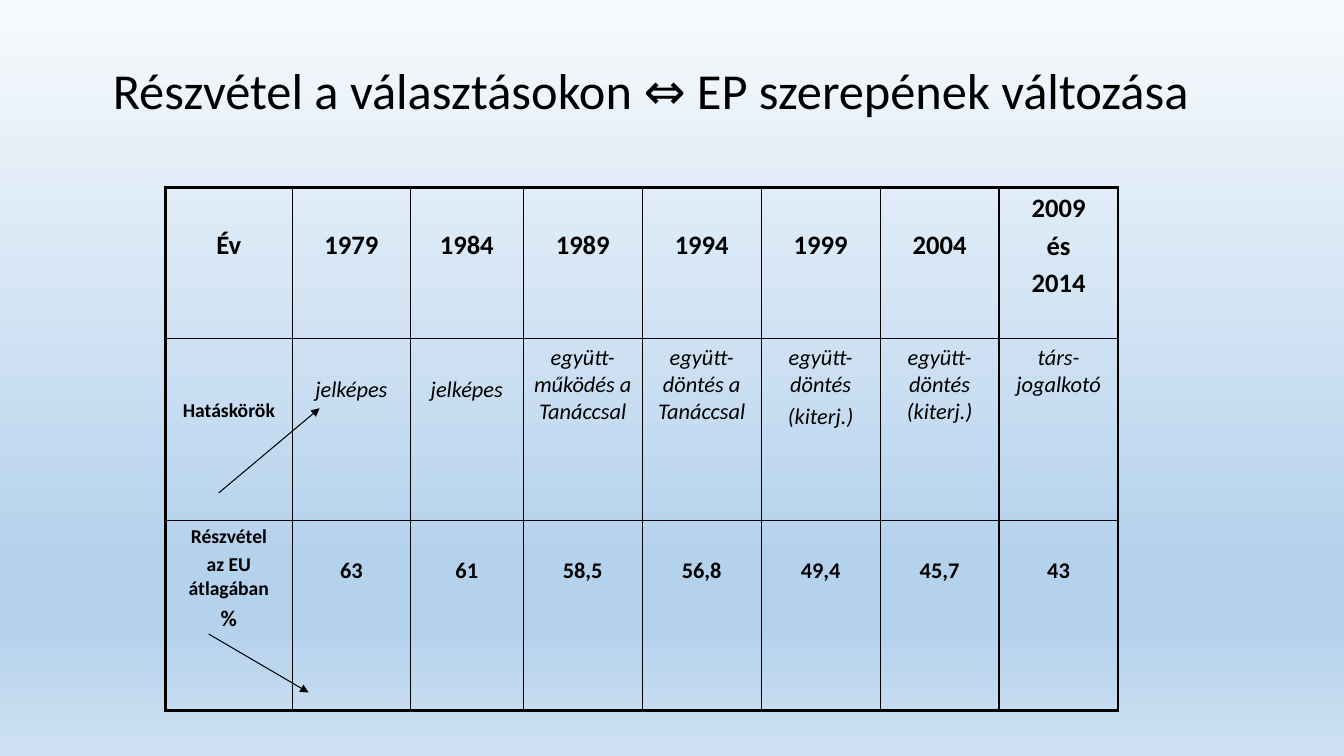
from lxml import etree
from pptx import Presentation
from pptx import util as u
from pptx.dml.color import RGBColor
from pptx.enum import shapes, text
from pptx.oxml.ns import qn

HUES = {"ink": "000000", "top": "F7FAFD", "mid": "B5D2EC", "base": "CEE1F2"}
FONT = "Calibri"
COLS = [1.26, 1.17, 1.12] + [1.18] * 5
ROWS = [1.5, 1.8, 1.89]
THIN, THICK = 1, 2.25


class Page:
    def __init__(self, deck):
        self.slide = deck.slides.add_slide(deck.slide_layouts[6])

    def backdrop(self, stops):
        fill = self.slide.background.fill
        fill.gradient()
        fill.gradient_angle = 270
        ramp = self.slide.element.find(".//" + qn("a:gsLst"))
        for old in list(ramp):
            ramp.remove(old)
        for spot, hue in stops:
            stop = etree.SubElement(ramp, qn("a:gs"), pos=str(spot * 1000))
            etree.SubElement(stop, qn("a:srgbClr"), val=HUES[hue])

    def style(self, para, size, bold=False, italic=False):
        font = para.font
        font.name, font.size = FONT, u.Pt(size)
        font.bold, font.italic = bold, italic
        font.color.rgb = RGBColor.from_string(HUES["ink"])

    def title(self, words, left, top, width, height, size):
        box = self.slide.shapes.add_textbox(*map(u.Inches, (left, top, width, height)))
        frame = box.text_frame
        frame.word_wrap = True
        frame.vertical_anchor = text.MSO_ANCHOR.MIDDLE
        para = frame.paragraphs[0]
        para.text = words
        para.line_spacing = 0.9
        self.style(para, size)

    def table(self, left, top, cols, rows):
        frame = self.slide.shapes.add_table(
            len(rows), len(cols), u.Inches(left), u.Inches(top),
            u.Inches(sum(cols)), u.Inches(sum(rows)))
        grid = frame.table
        grid.first_row = grid.horz_banding = False
        for col, width in zip(grid.columns, cols):
            col.width = u.Inches(width)
        for row, height in zip(grid.rows, rows):
            row.height = u.Inches(height)
        return grid

    def cell(self, cell, lines, inset, edges, bold, italic):
        cell.margin_top = u.Inches(inset)
        frame = cell.text_frame
        for i, (words, size) in enumerate(lines):
            para = frame.add_paragraph() if i else frame.paragraphs[0]
            para.text = words
            para.alignment = text.PP_ALIGN.CENTER
            if i:
                para.space_before = u.Pt(size * 0.2)
            self.style(para, size, bold, italic)
        props = cell._tc.get_or_add_tcPr()
        for side, width in zip("LRTB", edges):
            line = etree.SubElement(props, qn("a:ln" + side), w=str(u.Pt(width)))
            paint = etree.SubElement(line, qn("a:solidFill"))
            etree.SubElement(paint, qn("a:srgbClr"), val=HUES["ink"])
        cell.fill.background()

    def arrow(self, *ends):
        link = self.slide.shapes.add_connector(
            shapes.MSO_CONNECTOR.STRAIGHT, *map(u.Inches, ends))
        link.line.width = u.Pt(0.75)
        link.line.color.rgb = RGBColor.from_string(HUES["ink"])
        etree.SubElement(link.line._get_or_add_ln(), qn("a:tailEnd"), type="triangle")
        etree.SubElement(link._element.spPr, qn("a:effectLst"))


YEARS = ["Év", "1979", "1984", "1989", "1994", "1999", "2004", "2009\nés\n2014"]
POWERS = ["Hatáskörök", "jelképes", "jelképes", "együtt-működés a Tanáccsal",
          "együtt-döntés a Tanáccsal", "együtt-döntés\n(kiterj.)",
          "együtt-döntés (kiterj.)", "társ-jogalkotó"]
TURNOUT = ["Részvétel\naz EU átlagában\n%", "63", "61", "58,5", "56,8",
           "49,4", "45,7", "43"]
SIZES = [19, 16, 16]
INSETS = [[0.42] * 7 + [0.05],
          [0.6, 0.37, 0.37] + [0.05] * 5,
          [0.05] + [0.37] * 7]


def main():
    deck = Presentation()
    deck.slide_width, deck.slide_height = u.Inches(13.33), u.Inches(7.5)
    page = Page(deck)
    page.backdrop([(0, "top"), (74, "mid"), (83, "mid"), (100, "base")])
    page.title("Részvétel a választásokon ⇔ EP szerepének változása",
               1.02, 0.3, 11.65, 1.25, 36)
    grid = page.table(1.64, 1.86, COLS, ROWS)
    for r, row in enumerate([YEARS, POWERS, TURNOUT]):
        for c, words in enumerate(row):
            label = r > 0 and c == 0
            lines = [(line, 14 if label and line != "%" else SIZES[r])
                     for line in words.split("\n")]
            outer = (c == 0, c == len(COLS) - 1, r == 0, r == len(ROWS) - 1)
            edges = [THICK if edge else THIN for edge in outer]
            slant = r == 1 and not label
            page.cell(grid.cell(r, c), lines, INSETS[r][c], edges, not slant, slant)
    page.arrow(2.17, 4.89, 3.17, 4.05)
    page.arrow(2.07, 6.29, 3.06, 6.87)
    deck.save("out.pptx")


if __name__ == "__main__":
    main()
